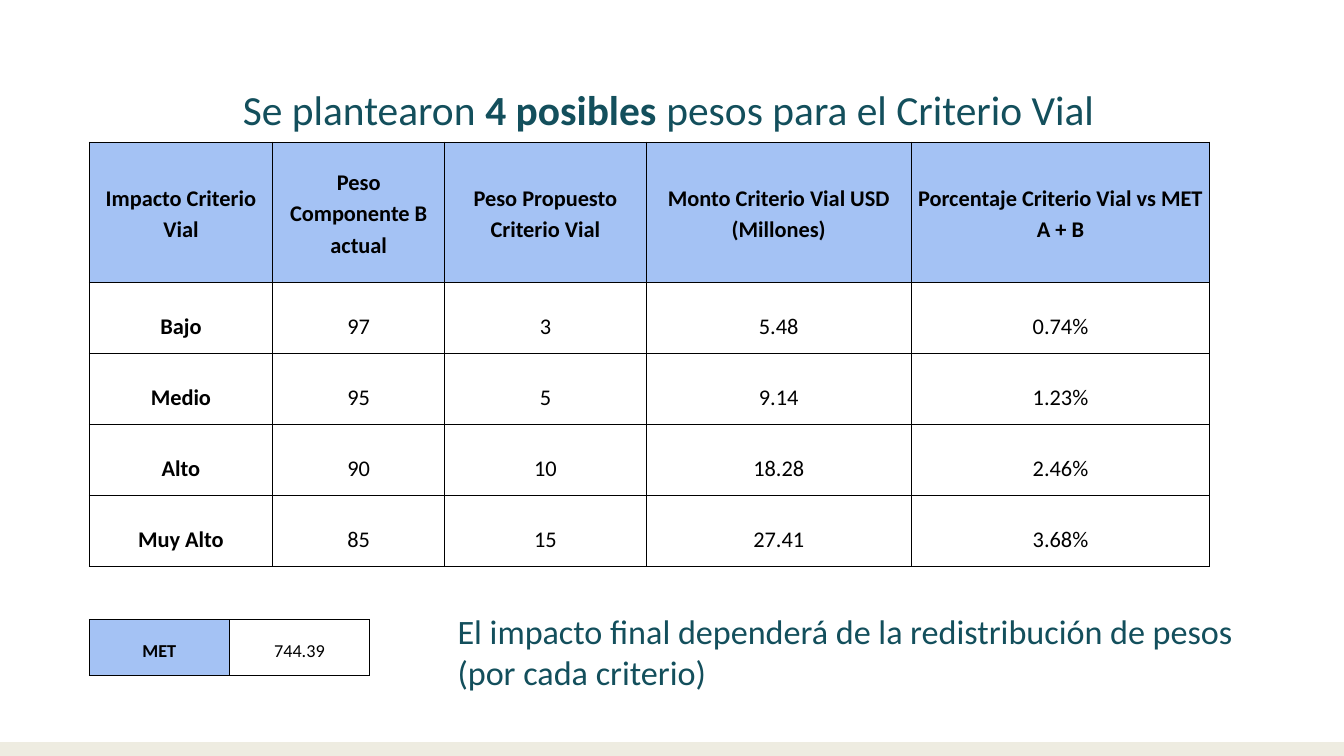
from lxml import etree
from pptx import Presentation
from pptx.dml.color import RGBColor
from pptx.enum import shapes, text
from pptx.oxml import ns
from pptx.util import Cm, Pt

TEAL = RGBColor(0x13, 0x4F, 0x5C)
BLUE = RGBColor(0xA4, 0xC2, 0xF4)
BEIGE = RGBColor(0xEE, 0xEC, 0xE1)
BLACK = RGBColor(0, 0, 0)
FONT = "Calibri"
PAD = Cm(0.33)
CELL_SIDE = Cm(0.1)

CRITERIA = [
    ["Impacto Criterio Vial", "Peso Componente B actual",
     "Peso Propuesto Criterio Vial", "Monto Criterio Vial USD (Millones)",
     "Porcentaje Criterio Vial vs MET A + B"],
    ["Bajo", "97", "3", "5.48", "0.74%"],
    ["Medio", "95", "5", "9.14", "1.23%"],
    ["Alto", "90", "10", "18.28", "2.46%"],
    ["Muy Alto", "85", "15", "27.41", "3.68%"],
]


def set_all(obj, values):
    for name, value in values.items():
        setattr(obj, name, value)


def set_font(font, size, color, bold=False):
    set_all(font, {"name": FONT, "size": Pt(size), "bold": bold})
    font.color.rgb = color


def add_strip(slide, prs):
    height = Cm(0.35)
    sp = slide.shapes.add_shape(shapes.MSO_SHAPE.RECTANGLE, 0,
                                prs.slide_height - height,
                                prs.slide_width, height)
    sp.shadow.inherit = False
    sp.fill.solid()
    sp.fill.fore_color.rgb = BEIGE
    sp.line.fill.background()


def fill_placeholder(sp, box, runs, size):
    """Place the placeholder and write (words, bold) runs, left and at the top."""
    set_all(sp, dict(zip(("left", "top", "width", "height"), map(Cm, box))))
    tf = sp.text_frame
    set_all(tf, {"margin_left": PAD, "margin_right": PAD, "margin_top": PAD,
                 "margin_bottom": PAD, "word_wrap": True,
                 "auto_size": text.MSO_AUTO_SIZE.NONE,
                 "vertical_anchor": text.MSO_ANCHOR.TOP})
    p = tf.paragraphs[0]
    set_all(p, {"alignment": text.PP_ALIGN.LEFT, "space_before": Pt(0)})
    pPr = p._p.get_or_add_pPr()
    pPr.set("marL", "0")
    pPr.set("indent", "0")
    etree.SubElement(pPr, ns.qn("a:buNone"))
    for words, bold in runs:
        r = p.add_run()
        r.text = words
        set_font(r.font, size, TEAL, bold)


def add_borders(cell):
    """Draw thin black lines; they must precede the fill in the cell properties."""
    tcPr = cell._tc.get_or_add_tcPr()
    for i, side in enumerate(("lnL", "lnR", "lnT", "lnB")):
        ln = etree.Element(ns.qn(f"a:{side}"), w=str(Pt(0.75)))
        fill = etree.SubElement(ln, ns.qn("a:solidFill"))
        etree.SubElement(fill, ns.qn("a:srgbClr"), val=str(BLACK))
        tcPr.insert(i, ln)


def format_cell(cell, words, size, bold, shaded, anchor):
    set_all(cell, {"margin_left": CELL_SIDE, "margin_right": CELL_SIDE,
                   "margin_top": PAD, "margin_bottom": PAD,
                   "vertical_anchor": anchor, "text": words})
    if shaded:
        cell.fill.solid()
        cell.fill.fore_color.rgb = BLUE
    else:
        cell.fill.background()
    p = cell.text_frame.paragraphs[0]
    set_all(p, {"alignment": text.PP_ALIGN.CENTER, "line_spacing": 1.15})
    set_font(p.runs[0].font, size, BLACK, bold)
    add_borders(cell)


def add_grid(slide, left, top, widths, heights, rows, size, has_header):
    """Add a table with bold first column; shade the header row, or else that column."""
    table = slide.shapes.add_table(len(rows), len(widths), Cm(left), Cm(top),
                                   Cm(sum(widths)), Cm(sum(heights))).table
    set_all(table, {"first_row": has_header, "horz_banding": False})
    for column, width in zip(table.columns, widths):
        column.width = Cm(width)
    for i, (row, height) in enumerate(zip(rows, heights)):
        table.rows[i].height = Cm(height)
        for j, words in enumerate(row):
            header = has_header and i == 0
            anchor = text.MSO_ANCHOR.MIDDLE if header else text.MSO_ANCHOR.BOTTOM
            shaded = header or (not has_header and j == 0)
            format_cell(table.cell(i, j), words, size, header or j == 0,
                        shaded, anchor)


def main():
    prs = Presentation()
    set_all(prs, {"slide_width": Cm(33.87), "slide_height": Cm(19.05)})
    slide = prs.slides.add_slide(prs.slide_layouts[1])
    title, body = slide.placeholders
    add_strip(slide, prs)
    fill_placeholder(title, (5.79, 1.8, 31.65, 3.58),
                     [("Se plantearon ", False), ("4 posibles", True),
                      (" pesos para el Criterio Vial", False)], 29.6)
    add_grid(slide, 2.25, 15.61, [3.53] * 2, [1.4], [["MET", "744.39"]], 13, False)
    add_grid(slide, 2.25, 3.58, [4.62, 4.34, 5.07, 6.69, 7.51],
             [3.53] + [1.79] * 4, CRITERIA, 16, True)
    fill_placeholder(body, (11.2, 15.04, 20.24, 2.92),
                     [("El impacto final dependerá de la redistribución de pesos "
                       "(por cada criterio)", False)], 24.4)
    prs.save("out.pptx")


if __name__ == "__main__":
    main()
